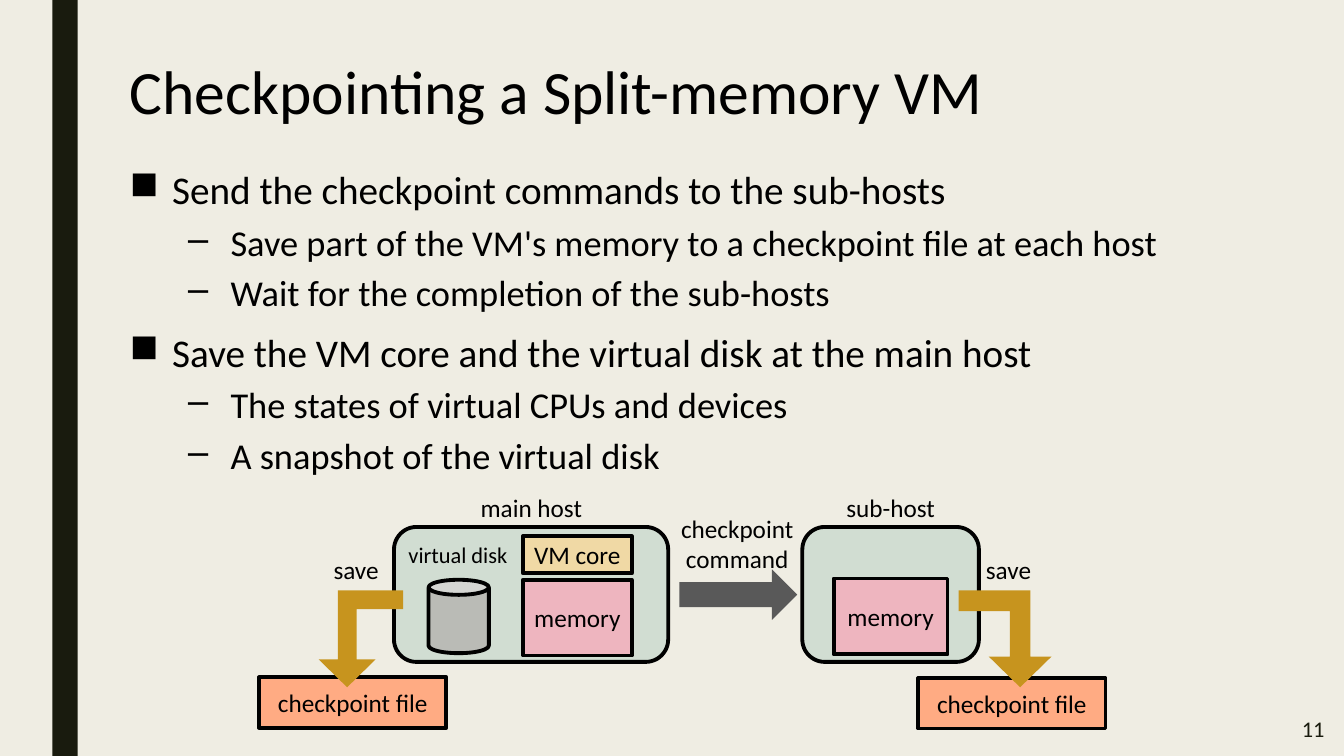
import pptx
import pptx.util
import pptx.dml.color
import pptx.enum.shapes
import pptx.enum.text
import pptx.oxml.ns
import lxml.etree
from dataclasses import dataclass

Cm, Pt = pptx.util.Cm, pptx.util.Pt
SHAPE = pptx.enum.shapes.MSO_SHAPE
ALIGN = pptx.enum.text.PP_ALIGN
ANCHOR = pptx.enum.text.MSO_ANCHOR


@dataclass(frozen=True)
class Theme:
    font: str = "Calibri"
    background: str = "EFEDE3"
    dark: str = "191B0E"
    ink: str = "000000"
    host: str = "D1DDD2"
    file: str = "FFAB83"
    memory: str = "EEB5BF"
    core: str = "F0D9A5"
    disk: str = "BABBB6"
    save: str = "C7941E"
    command: str = "595959"
    title_size: int = 44
    label_size: int = 18
    small_size: int = 16
    outline: float = 2.75


T = Theme()

TITLE = "Checkpointing a Split-memory VM"
PAGE = "11"
BULLETS = [
    (0, "Send the checkpoint commands to the sub-hosts"),
    (1, "Save part of the VM's memory to a checkpoint file at each host"),
    (1, "Wait for the completion of the sub-hosts"),
    (0, "Save the VM core and the virtual disk at the main host"),
    (1, "The states of virtual CPUs and devices"),
    (1, "A snapshot of the virtual disk"),
]
LEVELS = [
    dict(mark="■", size=28, indent=1.07, before=10),
    dict(mark="–", size=26, indent=2.54, before=5),
]
HANGING = 1.07

BOXES = [
    (SHAPE.RECTANGLE, (23.14, 17.09, 4.72, 1.27), T.file, "checkpoint file"),
    (SHAPE.RECTANGLE, (6.53, 17.07, 4.72, 1.27), T.file, "checkpoint file"),
    (SHAPE.ROUNDED_RECTANGLE, (20.22, 13.28, 4.45, 3.4), T.host, ""),
    (SHAPE.ROUNDED_RECTANGLE, (9.93, 13.28, 6.91, 3.4), T.host, ""),
    (SHAPE.RECTANGLE, (13.18, 14.61, 2.74, 1.91), T.memory, "memory"),
    (SHAPE.RECTANGLE, (21.01, 14.58, 2.87, 1.91), T.memory, "memory"),
    (SHAPE.RECTANGLE, (13.18, 13.51, 2.74, 0.94), T.core, "VM core"),
    (SHAPE.CAN, (10.8, 14.61, 1.52, 1.85), T.disk, ""),
]
SAVE_ARROWS = [
    ((8.03, 14.88, 2.13, 2.44), ("flipH", "flipV")),
    ((24.16, 14.88, 2.34, 2.44), ("flipV",)),
]
SAVE_ADJUSTMENTS = (0.222, 0.338, 0.331)
COMMAND_ARROW = (17.12, 14.35, 2.97, 1.27)
SIDE_BAR = (1.32, 0, 0.64, 19.05)
LABELS = [
    ((11.84, 12.29, 3.1, 1.02), ["main host"], T.label_size),
    ((21.06, 12.29, 2.77, 1.02), ["sub-host"], T.label_size),
    ((8.15, 13.84, 1.65, 1.02), ["save"], T.label_size),
    ((24.59, 13.84, 1.65, 1.02), ["save"], T.label_size),
    ((16.89, 12.8, 3.38, 1.8), ["checkpoint", "command"], T.label_size),
    ((10.03, 13.51, 3.02, 0.94), ["virtual disk"], T.small_size),
]


def rgb(color):
    return pptx.dml.color.RGBColor.from_string(color)


def add_run(p, text, size, color=T.ink):
    r = p.add_run()
    r.text = text
    r.font.name = T.font
    r.font.size = Pt(size)
    r.font.color.rgb = rgb(color)


def add_box(slide, kind, at, fill, text="", outlined=True):
    sp = slide.shapes.add_shape(kind, *map(Cm, at))
    sp.shadow.inherit = False
    sp.fill.solid()
    sp.fill.fore_color.rgb = rgb(fill)
    if outlined:
        sp.line.color.rgb = rgb(T.ink)
        sp.line.width = Pt(T.outline)
    else:
        sp.line.fill.background()
    if text:
        tf = sp.text_frame
        tf.margin_left = tf.margin_right = 0
        tf.vertical_anchor = ANCHOR.MIDDLE
        p = tf.paragraphs[0]
        p.alignment = ALIGN.CENTER
        add_run(p, text, T.label_size)
    return sp


def add_text(slide, at, anchor=ANCHOR.TOP):
    tf = slide.shapes.add_textbox(*map(Cm, at)).text_frame
    tf.word_wrap = True
    tf.vertical_anchor = anchor
    return tf


def next_paragraph(tf, i):
    return tf.add_paragraph() if i else tf.paragraphs[0]


def add_label(slide, at, lines, size):
    tf = add_text(slide, at)
    tf.word_wrap = False
    tf.auto_size = pptx.enum.text.MSO_AUTO_SIZE.SHAPE_TO_FIT_TEXT
    for i, line in enumerate(lines):
        p = next_paragraph(tf, i)
        p.alignment = ALIGN.CENTER
        add_run(p, line, size)


def add_bullets(slide, at):
    tf = add_text(slide, at)
    for i, (level, text) in enumerate(BULLETS):
        style = LEVELS[level]
        p = next_paragraph(tf, i)
        p.level = level
        p.line_spacing = 0.94
        p.space_before = Pt(style["before"])
        p.space_after = Pt(2)
        pPr = p._p.get_or_add_pPr()
        pPr.set("marL", str(Cm(style["indent"])))
        pPr.set("indent", str(-Cm(HANGING)))
        mark = lxml.etree.SubElement(pPr, pptx.oxml.ns.qn("a:buChar"))
        mark.set("char", style["mark"])
        add_run(p, text, style["size"])


def main():
    prs = pptx.Presentation()
    prs.slide_width, prs.slide_height = Cm(33.87), Cm(19.05)
    slide = prs.slides.add_slide(prs.slide_layouts[6])
    slide.background.fill.solid()
    slide.background.fill.fore_color.rgb = rgb(T.background)

    add_box(slide, SHAPE.RECTANGLE, SIDE_BAR, T.dark, outlined=False)
    p = add_text(slide, (3.02, 0.97, 28.98, 2.84), ANCHOR.MIDDLE).paragraphs[0]
    p.line_spacing = 0.89
    add_run(p, TITLE, T.title_size)
    add_bullets(slide, (3.02, 4.14, 28.98, 13.54))
    p = add_text(slide, (29.18, 17.81, 4.45, 1.12), ANCHOR.MIDDLE).paragraphs[0]
    p.alignment = ALIGN.RIGHT
    add_run(p, PAGE, T.small_size, T.dark)

    for kind, at, fill, text in BOXES:
        add_box(slide, kind, at, fill, text)
    for at, flips in SAVE_ARROWS:
        sp = add_box(slide, SHAPE.BENT_UP_ARROW, at, T.save, outlined=False)
        for i, value in enumerate(SAVE_ADJUSTMENTS):
            sp.adjustments[i] = value
        for flip in flips:
            sp._element.spPr.xfrm.set(flip, "1")
    add_box(slide, SHAPE.RIGHT_ARROW, COMMAND_ARROW, T.command, outlined=False)
    for at, lines, size in LABELS:
        add_label(slide, at, lines, size)

    prs.save("out.pptx")


if __name__ == "__main__":
    main()
